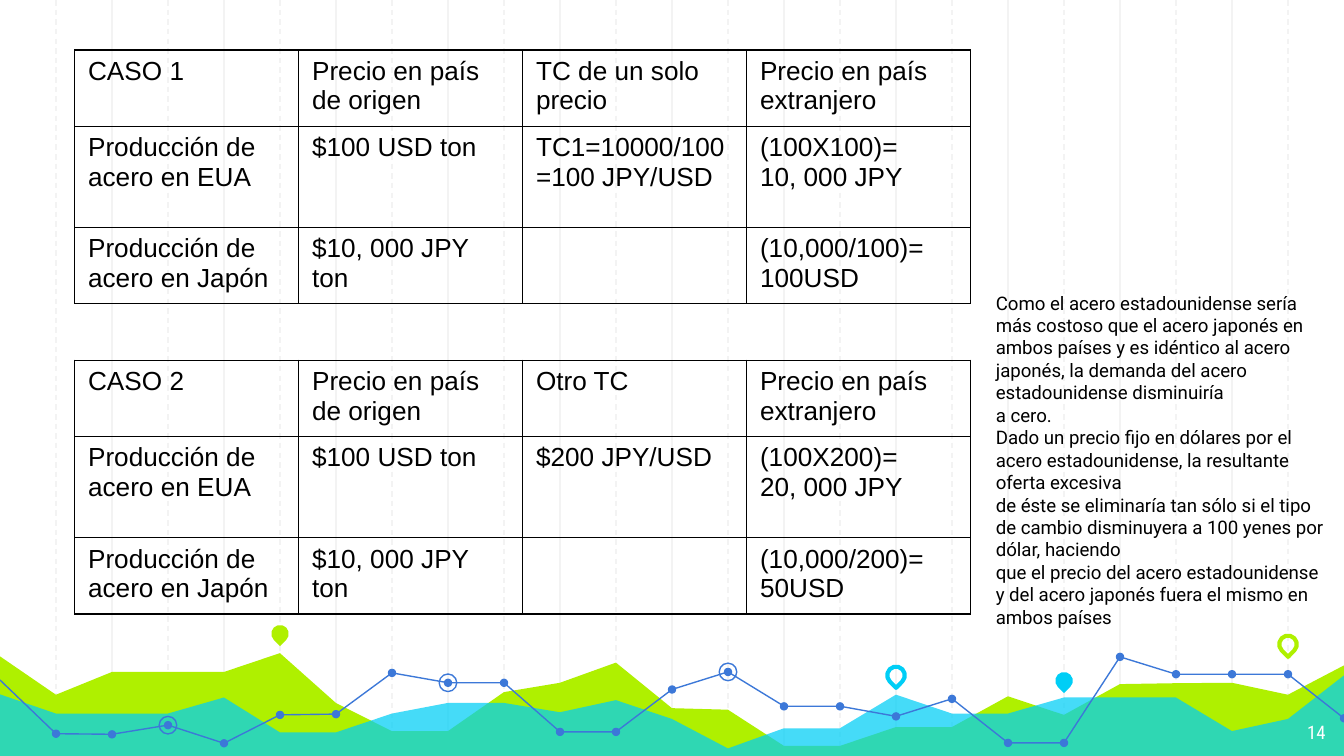
from copy import deepcopy
from dataclasses import dataclass

from lxml import etree
from pptx import Presentation
from pptx import util as u
from pptx.dml import color
from pptx.enum import dml, shapes, text
from pptx.oxml import ns


@dataclass(frozen=True)
class Theme:
    ink: str = "000000"
    paper: str = "FFFFFF"
    grid: str = "F3F3F3"
    lime: str = "AFF000"
    cyan: str = "00CEF6"
    blue: str = "3C78D8"
    table_size: float = 14
    note_size: float = 10
    thin: float = 0.75
    thick: float = 2.25


THEME = Theme()
WIDTH, HEIGHT, STEP = 720, 405, 30
BASE, BLEED = 406.5, 1.5

# Heights of the landscape, one per grid step from the left edge
LIME_HILLS = [350.6, 372.2, 360, 360, 360, 349.9, 376.6, 391.7, 391.7, 370.8,
              365.8, 355, 379.4, 380.2, 399.6, 399.6, 389.5, 389.5, 373, 383,
              366.5, 366, 365.8, 372.2, 355.7]
CYAN_HILLS = [371.5, 382.3, 382.3, 382.3, 373.7, 392.4, 392.4, 382.3, 376.6,
              376.6, 381.6, 375.1, 385.2, 401, 390.2, 390.2, 372.2, 382.3,
              382.3, 373.7, 373.7, 373.7, 391.7, 385.2, 360.7]
TREND = [364.3, 393.1, 393.4, 388.5, 398.2, 383, 382.6, 360.5, 365.8, 365.8,
         392.1, 392.1, 369.4, 360, 378.4, 378.4, 383.8, 374.4, 398, 398,
         351.9, 361.2, 361.2, 361.2, 384.8]
TREND_BREAKS = [0, 11, 20, 24]
RINGED = [3, 8, 13]
PINS = [(5, 339.5, THEME.lime, True), (16, 361.8, THEME.cyan, False),
        (19, 364.7, THEME.cyan, True), (23, 345.2, THEME.lime, False)]

CONCLUSION = (
    "Como el acero estadounidense sería más costoso que el acero japonés en\v"
    "ambos países y es idéntico al acero japonés, la demanda del acero "
    "estadounidense disminuiría\va cero.\n"
    "Dado un precio fijo en dólares por el acero estadounidense, la resultante "
    "oferta excesiva\vde éste se eliminaría tan sólo si el tipo de cambio "
    "disminuyera a 100 yenes por dólar, haciendo\vque el precio del acero "
    "estadounidense y del acero japonés fuera el mismo en ambos países")


def rgb(code):
    return color.RGBColor.from_string(code)


def paint(shape, fill=None, line=None, weight=THEME.thin):
    shape.shadow.inherit = False
    if fill:
        shape.fill.solid()
        shape.fill.fore_color.rgb = rgb(fill)
    else:
        shape.fill.background()
    if line:
        shape.line.color.rgb = rgb(line)
        shape.line.width = u.Pt(weight)
    else:
        shape.line.fill.background()


def write(frame, content, *, font, size, ink=THEME.ink, align=text.PP_ALIGN.LEFT):
    """Newlines part paragraphs; vertical tabs break lines inside one."""
    frame.word_wrap = True
    frame.text = content
    for paragraph in frame.paragraphs:
        paragraph.alignment = align
        for run in paragraph.runs:
            run.font.name = font
            run.font.size = u.Pt(size)
            run.font.color.rgb = rgb(ink)
        for line_break in paragraph._p.findall(ns.qn("a:br")):
            line_break.insert(0, deepcopy(paragraph.runs[0]._r.rPr))


def add_note(slide, left, top, width, height, content, **form):
    frame = slide.shapes.add_textbox(*map(u.Pt, (left, top, width, height))).text_frame
    write(frame, content, **form)
    return frame


def add_grid_line(slide, x, dashed):
    rule = slide.shapes.add_connector(
        shapes.MSO_CONNECTOR.STRAIGHT, u.Pt(x), 0, u.Pt(x), u.Pt(BASE))
    rule.line.color.rgb = rgb(THEME.grid)
    rule.line.width = u.Pt(THEME.thin)
    if dashed:
        rule.line.dash_style = dml.MSO_LINE.DASH
    etree.SubElement(rule._element.spPr, ns.qn("a:effectLst"))


def add_outline(slide, points, close, **look):
    corners = [(u.Pt(x), u.Pt(y)) for x, y in points]
    builder = slide.shapes.build_freeform(*corners[0])
    builder.add_line_segments(corners[1:], close=close)
    outline = builder.convert_to_shape()
    paint(outline, **look)
    return outline


def add_hills(slide, heights, fill, opacity=100):
    ridge = [(i * STEP, y) for i, y in enumerate(heights)]
    ridge[0] = (-BLEED, heights[0])
    ridge[-1] = (WIDTH + BLEED, heights[-1])
    floor = [(WIDTH + BLEED, BASE), (-BLEED, BASE)]
    hills = add_outline(slide, ridge + floor, True, fill=fill)
    if opacity < 100:
        tint = hills._element.spPr.find(f"{ns.qn('a:solidFill')}/{ns.qn('a:srgbClr')}")
        etree.SubElement(tint, ns.qn("a:alpha"), val=str(opacity * 1000))


def add_marker(slide, kind, step, y, size, **look):
    marker = slide.shapes.add_shape(
        kind, u.Pt(step * STEP - size / 2), u.Pt(y - size / 2), u.Pt(size), u.Pt(size))
    paint(marker, **look)
    return marker


def add_trend(slide):
    for first, last in zip(TREND_BREAKS, TREND_BREAKS[1:]):
        points = [(i * STEP, TREND[i]) for i in range(first, last + 1)]
        add_outline(slide, points, False, line=THEME.blue)
    oval = shapes.MSO_SHAPE.OVAL
    for step, y in enumerate(TREND[1:], 1):
        add_marker(slide, oval, step, y, 4.5, fill=THEME.blue)
    for step in RINGED:
        add_marker(slide, oval, step, TREND[step], 9.4, line=THEME.blue)


def add_pin(slide, step, y, tone, solid):
    look = {"fill": tone} if solid else {"line": tone, "weight": THEME.thick}
    pin = add_marker(slide, shapes.MSO_SHAPE.TEAR, step, y, 9.4, **look)
    pin.rotation = 135


def border_cell(cell):
    properties = cell._tc.get_or_add_tcPr()
    for place, side in enumerate(("a:lnL", "a:lnR", "a:lnT", "a:lnB")):
        edge = etree.Element(ns.qn(side), w=str(u.Pt(THEME.thin)))
        stroke = etree.SubElement(edge, ns.qn("a:solidFill"))
        etree.SubElement(stroke, ns.qn("a:srgbClr"), val=THEME.ink)
        properties.insert(place, edge)


def case_rows(title, rate_title, rate, price_in_yen, price_in_dollars):
    return [
        [title, "Precio en país de origen", rate_title, "Precio en país extranjero"],
        ["Producción de acero en EUA", "$100 USD ton", rate, price_in_yen],
        ["Producción de acero en Japón", "$10, 000 JPY ton", "", price_in_dollars],
    ]


def add_case(slide, top, rows):
    row_heights = [38.6, 54.2, 38.8]
    case = slide.shapes.add_table(
        3, 4, u.Pt(40), u.Pt(top), u.Pt(480), u.Pt(sum(row_heights))).table
    case.first_row = case.horz_banding = False
    for column in case.columns:
        column.width = u.Pt(120)
    for r, (height, entries) in enumerate(zip(row_heights, rows)):
        case.rows[r].height = u.Pt(height)
        for c, entry in enumerate(entries):
            cell = case.cell(r, c)
            cell.fill.background()
            border_cell(cell)
            write(cell.text_frame, entry, font="Arial", size=THEME.table_size)


def main():
    deck = Presentation()
    deck.slide_width, deck.slide_height = u.Pt(WIDTH), u.Pt(HEIGHT)
    slide = deck.slides.add_slide(deck.slide_layouts[6])
    slide.background.fill.solid()
    slide.background.fill.fore_color.rgb = rgb(THEME.paper)

    # Backdrop: grid, hills, trend line and pins
    for step in range(1, WIDTH // STEP):
        add_grid_line(slide, step * STEP, dashed=step % 2 == 1)
    add_hills(slide, LIME_HILLS, THEME.lime)
    add_hills(slide, CYAN_HILLS, THEME.cyan, opacity=73)
    add_trend(slide)
    for pin in PINS:
        add_pin(slide, *pin)

    # Slide number
    number = add_note(slide, 674, 380.2, 43.2, 25.2, "14", font="Roboto Condensed",
                      size=THEME.note_size, ink=THEME.paper, align=text.PP_ALIGN.RIGHT)
    number.margin_top = number.margin_bottom = u.Pt(7.2)

    # The two cases
    add_case(slide, 26.8, case_rows(
        "CASO 1", "TC de un solo precio", "TC1=10000/100=100 JPY/USD",
        "(100X100)=\n10, 000 JPY", "(10,000/100)=\n100USD"))
    add_case(slide, 193, case_rows(
        "CASO 2", "Otro TC", "$200 JPY/USD",
        "(100X200)=\n20, 000 JPY", "(10,000/200)=\n50USD"))

    # Conclusion
    add_note(slide, 526.4, 152.6, 190.8, 200.9, CONCLUSION,
             font="Roboto", size=THEME.note_size)

    deck.save("out.pptx")


if __name__ == "__main__":
    main()
